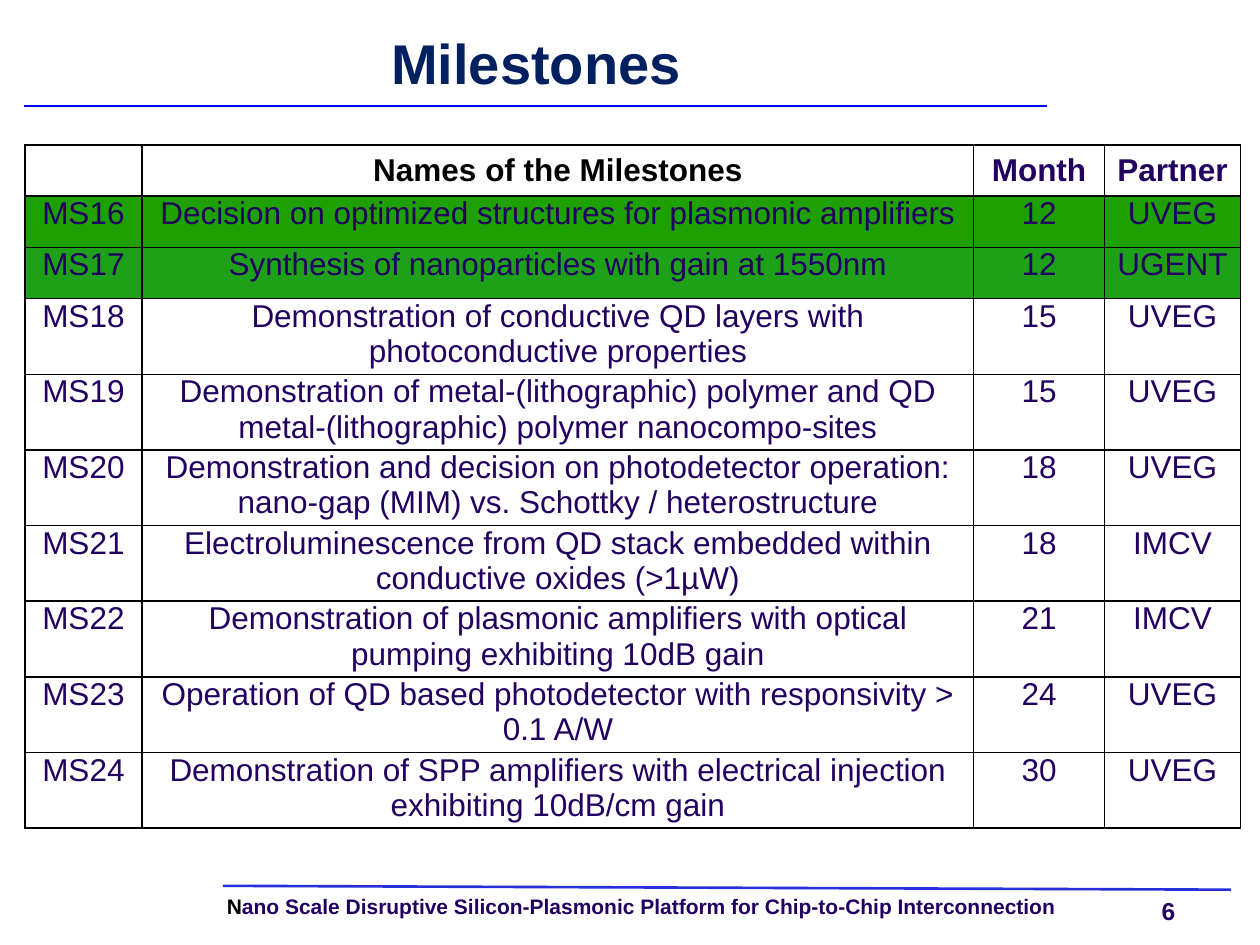
from lxml.etree import SubElement as Sub
from pptx import Presentation
from pptx.dml.color import RGBColor as Rgb
from pptx.enum.shapes import MSO_CONNECTOR as Conn
from pptx.enum.text import MSO_ANCHOR as Anchor, PP_ALIGN as Align
from pptx.oxml.ns import qn
from pptx.util import Pt

HUE = {
    "black": "000000", "white": "FFFFFF", "ink": "220060", "navy": "002060",
    "rule": "0000FF", "base": "262FDA", "green": "1EA000", "moss": "1EA019",
}
HEAD = ["", "Names of the Milestones", "Month", "Partner"]
ROWS = [
    ("MS16", "Decision on optimized structures for plasmonic amplifiers", "12", "UVEG", "green"),
    ("MS17", "Synthesis of nanoparticles with gain at 1550nm", "12", "UGENT", "moss"),
    ("MS18", "Demonstration of conductive QD layers with photoconductive properties", "15", "UVEG", "white"),
    ("MS19", "Demonstration of metal-(lithographic) polymer and QD metal-(lithographic) polymer nanocompo-sites",
     "15", "UVEG", None),
    ("MS20", "Demonstration and decision on photodetector operation: nano-gap (MIM) vs. Schottky / heterostructure",
     "18", "UVEG", None),
    ("MS21", "Electroluminescence from QD stack embedded within conductive oxides (>1µW)", "18", "IMCV", None),
    ("MS22", "Demonstration of plasmonic amplifiers with optical pumping exhibiting 10dB gain", "21", "IMCV", None),
    ("MS23", "Operation of QD based photodetector with responsivity > 0.1 A/W", "24", "UVEG", None),
    ("MS24", "Demonstration of SPP amplifiers with electrical injection exhibiting 10dB/cm gain",
     "30", "UVEG", None),
]
COLS = [67, 475.2, 74.8, 77.8]
ROW = 29.3
FLAT = {"margin_left": 0, "margin_top": 0, "margin_right": 0, "margin_bottom": 0}
CELL = {"margin_left": Pt(5), "margin_top": 0, "margin_right": Pt(5), "margin_bottom": 0}


def apply(item, form):
    for key, val in form.items():
        setattr(item, key, val)


def add_run(para, text, size, hue, bold):
    run = para.add_run()
    run.text = text
    apply(run.font, {"name": "Arial", "size": Pt(size), "bold": bold})
    run.font.color.rgb = Rgb.from_string(HUE[hue])


def add_text(slide, box, runs, size, frame, para):
    text = slide.shapes.add_textbox(*map(Pt, box)).text_frame
    apply(text, FLAT | frame)
    apply(text.paragraphs[0], para)
    for words, hue in runs:
        add_run(text.paragraphs[0], words, size, hue, True)


def add_rule(slide, ends, hue):
    line = slide.shapes.add_connector(Conn.STRAIGHT, *map(Pt, ends))
    line.line.color.rgb = Rgb.from_string(HUE[hue])
    line.line.width = Pt(1.5)
    Sub(line._element.spPr, qn("a:effectLst"))


def add_edges(cell):
    props = cell._tc.get_or_add_tcPr()
    for spot, side in enumerate(("L", "R", "T", "B")):
        edge = Sub(props, qn(f"a:ln{side}"), w=str(Pt(1)))
        fill = Sub(edge, qn("a:solidFill"))
        Sub(fill, qn("a:srgbClr"), val=HUE["black"])
        props.remove(edge)
        props.insert(spot, edge)


def add_cell(cell, text, hue, bold, fill, form):
    apply(cell, form)
    if fill:
        cell.fill.solid()
        cell.fill.fore_color.rgb = Rgb.from_string(HUE[fill])
    else:
        cell.fill.background()
    add_edges(cell)
    if text:
        para = cell.text_frame.paragraphs[0]
        para.alignment = Align.CENTER
        add_run(para, text, 18, hue, bold)


def add_title(slide, x, y, w, h):
    add_text(slide, (x, y, w, h), [("Milestones", "navy")], 32,
             {"word_wrap": True, "vertical_anchor": Anchor.MIDDLE},
             {"alignment": Align.CENTER, "line_spacing": Pt(32)})
    base = y + h - 2
    add_rule(slide, (x - 0.6, base, x + w, base), "rule")


def add_grid(slide, x, y, w, h):
    table = slide.shapes.add_table(len(ROWS) + 1, len(COLS), *map(Pt, (x, y, w, h))).table
    apply(table, {"first_row": False, "horz_banding": False})
    for col, wide in zip(table.columns, COLS):
        col.width = Pt(wide)
    for row in table.rows:
        row.height = Pt(ROW)
    for c, text in enumerate(HEAD):
        hue = "black" if c == 1 else "ink"
        add_cell(table.cell(0, c), text, hue, True, None, {"vertical_anchor": Anchor.MIDDLE})
    for r, (*texts, fill) in enumerate(ROWS, 1):
        for c, text in enumerate(texts):
            add_cell(table.cell(r, c), text, "ink", False, fill, CELL)


def add_foot(slide, x, y, w, h):
    add_rule(slide, (x, y, x + w, y + 2.2), "base")
    name = "ano Scale Disruptive Silicon-Plasmonic Platform for Chip-to-Chip Interconnection"
    top = y + h - 16.5
    add_text(slide, (x + 2.2, top, 514, 13), [("N", "black"), (name, "ink")], 12,
             {"word_wrap": True}, {"line_spacing": 0.9})
    add_text(slide, (x + w - 39.6, top, 28.8, 16.5), [("6", "ink")], 14, {"word_wrap": False}, {})


def main():
    deck = Presentation()
    apply(deck, {"slide_width": Pt(720), "slide_height": Pt(540)})
    slide = deck.slides.add_slide(deck.slide_layouts[6])
    slide.background.fill.solid()
    slide.background.fill.fore_color.rgb = Rgb.from_string(HUE["white"])
    add_foot(slide, 127.4, 506.2, 576, 22.3)
    add_title(slide, 14.4, 14.4, 584, 48.2)
    add_grid(slide, 14.2, 82.8, sum(COLS), ROW * (len(ROWS) + 1))
    deck.save("out.pptx")


if __name__ == "__main__":
    main()
